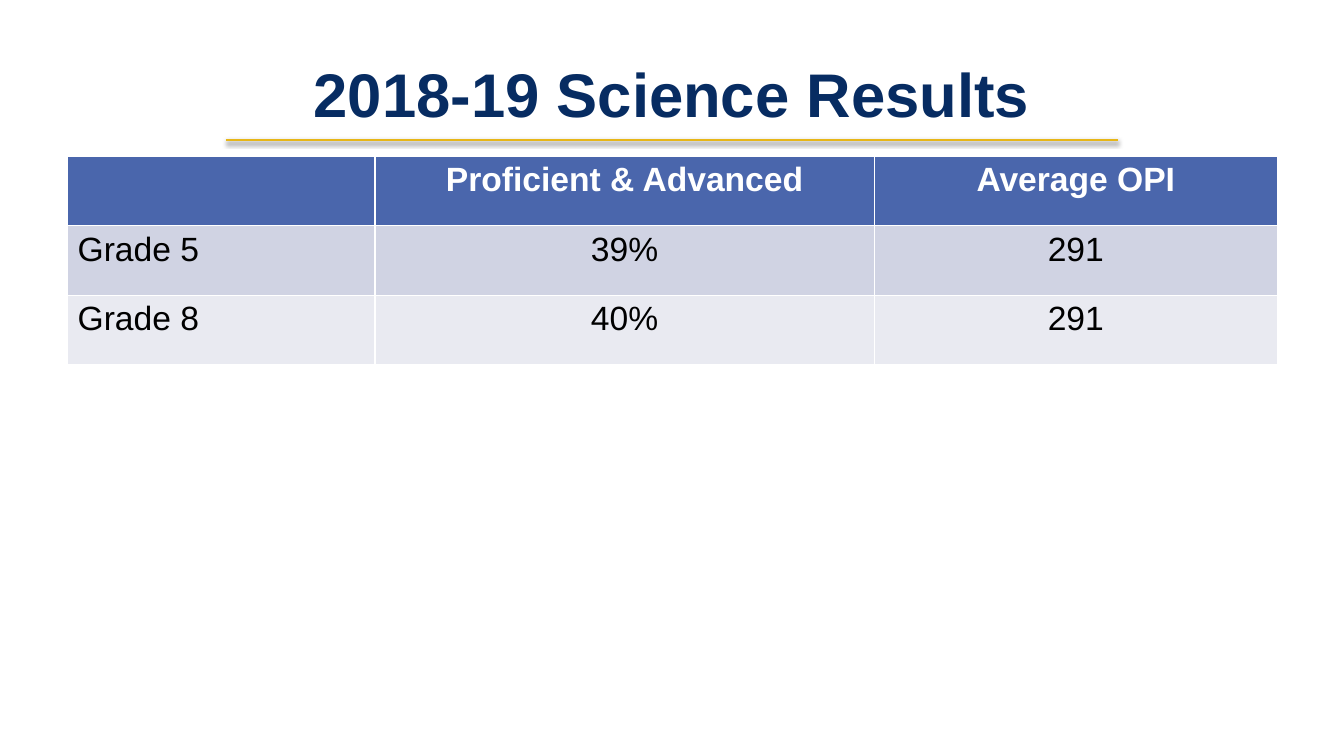
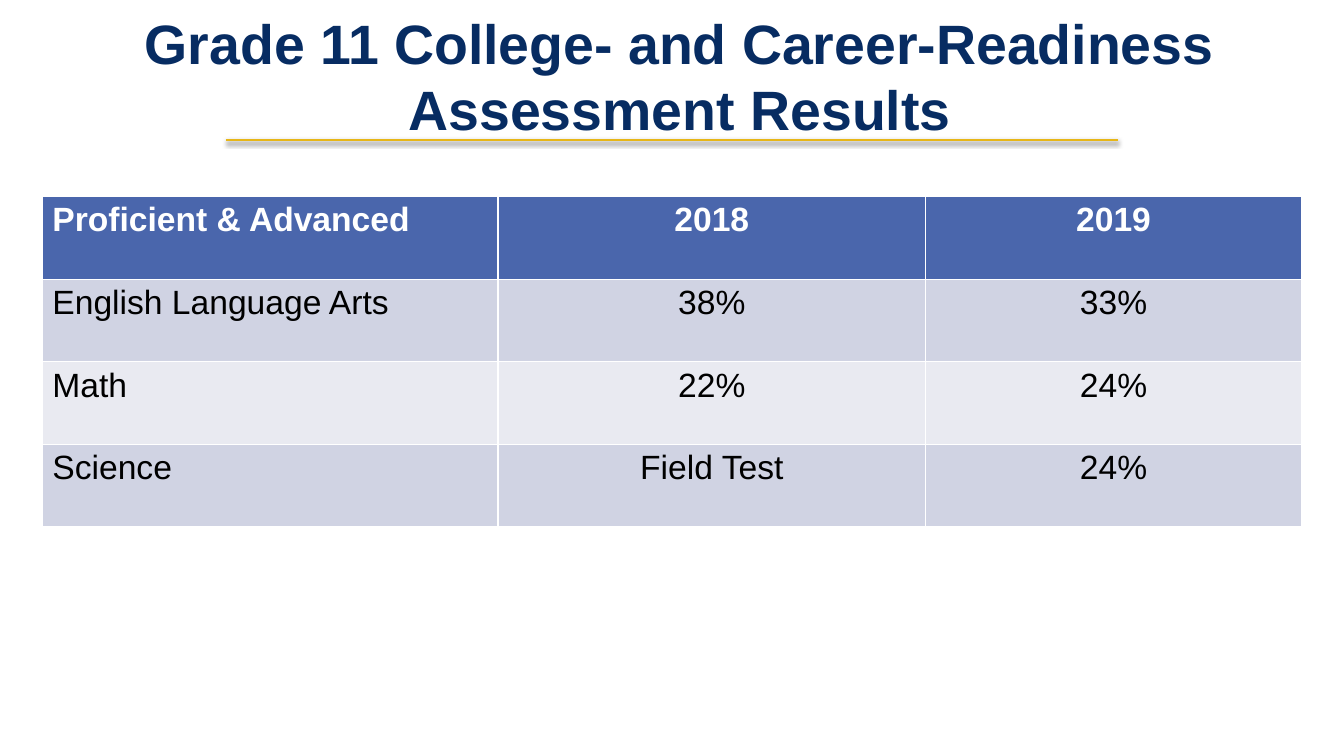
"""Build two slides of school assessment results, each a title, a gold rule and a table."""
import pptx
import pptx.dml.color
import pptx.enum.text
import pptx.oxml
import pptx.util

RGB = pptx.dml.color.RGBColor
Inches = pptx.util.Inches
Pt = pptx.util.Pt
PP_ALIGN = pptx.enum.text.PP_ALIGN

NAVY = RGB(0x07, 0x2C, 0x62)
GOLD = RGB(0xE7, 0xB6, 0x17)
BLUE = RGB(0x4A, 0x66, 0xAC)
WHITE = RGB(0xFF, 0xFF, 0xFF)
BLACK = RGB(0x00, 0x00, 0x00)
BANDS = [RGB(0xE9, 0xEA, 0xF1), RGB(0xD0, 0xD3, 0xE3)]
FONT = "Arial"

SHADOW = (
    '<a:effectLst xmlns:a="http://schemas.openxmlformats.org/drawingml/2006/main">'
    '<a:outerShdw blurRad="39370" dist="20320" dir="5400000" rotWithShape="0">'
    '<a:srgbClr val="000000"><a:alpha val="38000"/></a:srgbClr>'
    '</a:outerShdw></a:effectLst>'
)

SLIDES = [
    {
        "title": "2018-19 Science Results",
        "size": 44,
        "title_box": (0, 0.3, 13.33, 1.25),
        "table_at": (0.67, 1.55),
        "cols": [3.05, 4.95, 4],
        "row_height": 0.69,
        "header_align": PP_ALIGN.CENTER,
        "rows": [
            ["", "Proficient & Advanced", "Average OPI"],
            ["Grade 5", "39%", "291"],
            ["Grade 8", "40%", "291"],
        ],
    },
    {
        "title": "Grade 11 College- and Career-Readiness Assessment Results",
        "size": 39.6,
        "title_box": (0.15, 0.12, 13.18, 1.25),
        "table_at": (0.42, 1.95),
        "cols": [4.52, 4.24, 3.73],
        "row_height": 0.82,
        "header_align": PP_ALIGN.LEFT,
        "rows": [
            ["Proficient & Advanced", "2018", "2019"],
            ["English Language Arts", "38%", "33%"],
            ["Math", "22%", "24%"],
            ["Science", "Field Test", "24%"],
        ],
    },
]


def set_text(tf, text, size, color, bold, align):
    tf.text = text
    p = tf.paragraphs[0]
    p.alignment = align
    p.font.size = Pt(size)
    for r in p.runs:
        r.font.name = FONT
        r.font.size = Pt(size)
        r.font.bold = bold
        r.font.color.rgb = color


prs = pptx.Presentation()
prs.slide_width = Inches(13.33)
prs.slide_height = Inches(7.5)

for spec_row in SLIDES:
    s = prs.slides.add_slide(prs.slide_layouts[6])

    rule = s.shapes.add_connector(
        pptx.enum.shapes.MSO_CONNECTOR.STRAIGHT,
        Inches(2.24), Inches(1.39), Inches(11.09), Inches(1.39))
    rule.line.color.rgb = GOLD
    rule.line.width = Pt(2)
    rule._element.spPr.append(pptx.oxml.parse_xml(SHADOW))

    title = s.shapes.add_textbox(*map(Inches, spec_row["title_box"]))
    tf = title.text_frame
    tf.word_wrap = True
    tf.vertical_anchor = pptx.enum.text.MSO_ANCHOR.MIDDLE
    set_text(tf, spec_row["title"], spec_row["size"], NAVY, True, PP_ALIGN.CENTER)

    rows, cols = spec_row["rows"], spec_row["cols"]
    left, top = spec_row["table_at"]
    table = s.shapes.add_table(
        len(rows), len(cols), Inches(left), Inches(top),
        Inches(sum(cols)), Inches(spec_row["row_height"] * len(rows))).table
    for column, width in zip(table.columns, cols):
        column.width = Inches(width)
    for i, texts in enumerate(rows):
        table.rows[i].height = Inches(spec_row["row_height"])
        header = i == 0
        for j, text in enumerate(texts):
            cell = table.cell(i, j)
            cell.fill.solid()
            cell.fill.fore_color.rgb = BLUE if header else BANDS[i % 2]
            if j > 0:
                align = PP_ALIGN.CENTER
            else:
                align = spec_row["header_align"] if header else PP_ALIGN.LEFT
            set_text(cell.text_frame, text, 24, WHITE if header else BLACK, header, align)

prs.save("out.pptx")
